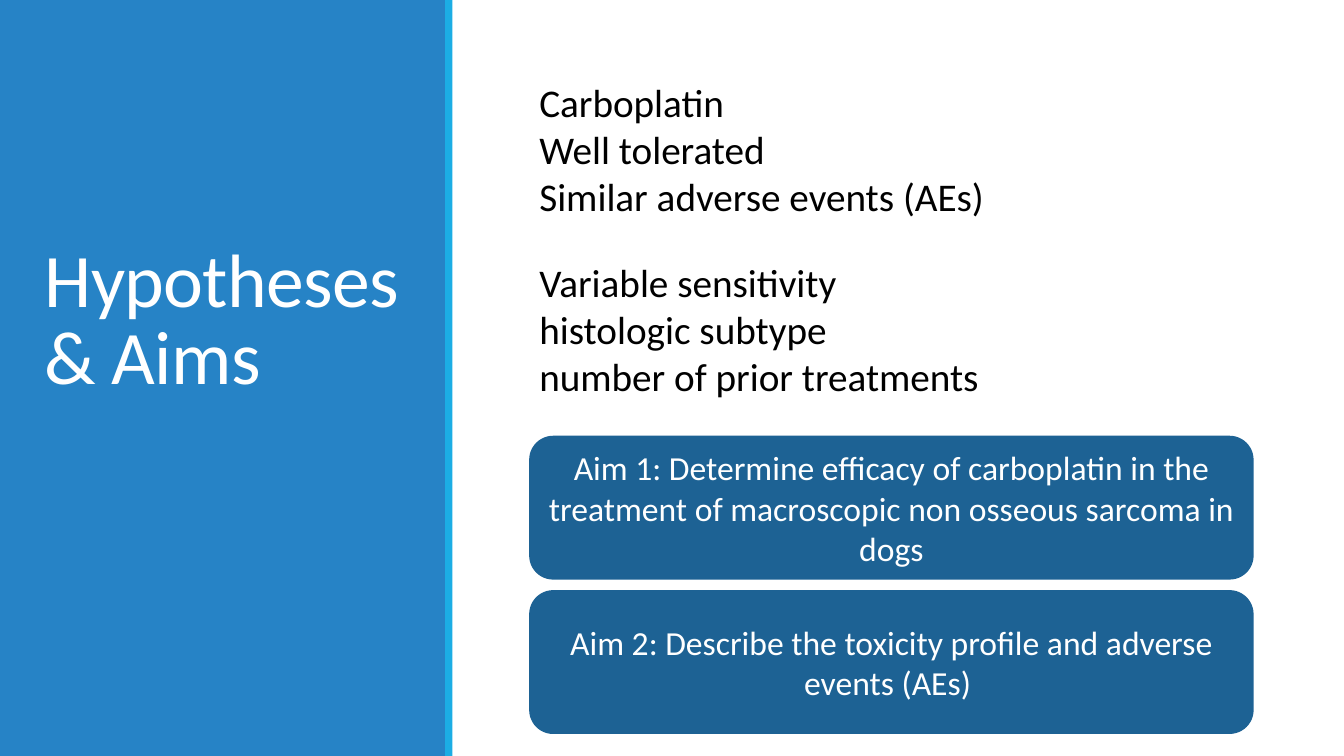
from dataclasses import dataclass

from lxml.etree import SubElement
from pptx import Presentation
from pptx.dml.color import RGBColor
from pptx.enum.shapes import MSO_SHAPE
from pptx.enum.text import MSO_ANCHOR, MSO_AUTO_SIZE, PP_ALIGN
from pptx.oxml.ns import qn
from pptx.shapes.autoshape import Shape
from pptx.slide import Slide
from pptx.text.text import _Paragraph as Paragraph
from pptx.util import Emu, Pt

EMU_PER_PX = 9525
FONT = "Calibri"
WHITE, BLACK = "FFFFFF", "000000"
BLUE, CYAN, NAVY = "2683C6", "1CADE4", "1D6294"
CONTENT_LEFT = 504
AIM_TOP, AIM_HEIGHT, AIM_GAP = 415, 137, 10


@dataclass
class Box:
    left: int
    top: int
    width: int
    height: int


@dataclass
class Panel:
    box: Box
    fill: str


@dataclass
class Hypothesis:
    placeholder: int
    top: int
    lines: list[str]


PANELS = [Panel(Box(0, 0, 425, 720), BLUE), Panel(Box(424, 0, 7, 720), CYAN)]
HYPOTHESES = [
    Hypothesis(1, 70, ["Carboplatin", "Well tolerated", "Similar adverse events (AEs)"]),
    Hypothesis(2, 241, ["Variable sensitivity", "histologic subtype", "number of prior treatments"]),
]
AIMS = [
    "Aim 1: Determine efficacy of carboplatin in the treatment of macroscopic non osseous sarcoma in dogs",
    "Aim 2: Describe the toxicity profile and adverse events (AEs) ",
]


def px(length: int) -> Emu:
    return Emu(length * EMU_PER_PX)


def color(value: str) -> RGBColor:
    return RGBColor.from_string(value)


def place(shape: Shape, box: Box) -> None:
    shape.left, shape.top = px(box.left), px(box.top)
    shape.width, shape.height = px(box.width), px(box.height)


def style(paragraph: Paragraph, size: int, text_color: str, alignment: PP_ALIGN) -> None:
    paragraph.alignment = alignment
    paragraph.font.name = FONT
    paragraph.font.size = Pt(size)
    paragraph.font.color.rgb = color(text_color)


def add_block(slide: Slide, kind: MSO_SHAPE, box: Box, fill: str) -> Shape:
    shape = slide.shapes.add_shape(
        kind, px(box.left), px(box.top), px(box.width), px(box.height)
    )
    shape.shadow.inherit = False
    shape.fill.solid()
    shape.fill.fore_color.rgb = color(fill)
    shape.line.fill.background()
    return shape


def add_panel(slide: Slide, panel: Panel) -> None:
    shape = add_block(slide, MSO_SHAPE.RECTANGLE, panel.box, panel.fill)
    slide.shapes.title.element.addprevious(shape.element)


def fill_title(slide: Slide) -> None:
    title = slide.shapes.title
    place(title, Box(33, 143, 389, 243))
    frame = title.text_frame
    frame.text = "Hypotheses \v& Aims"
    frame.auto_size = MSO_AUTO_SIZE.NONE
    frame.vertical_anchor = MSO_ANCHOR.BOTTOM
    paragraph = frame.paragraphs[0]
    paragraph.line_spacing = 0.85
    style(paragraph, 54, WHITE, PP_ALIGN.LEFT)
    for run in paragraph.runs:
        run._r.get_or_add_rPr().set("spc", "-50")


def fill_hypothesis(slide: Slide, hypothesis: Hypothesis) -> None:
    body = slide.placeholders[hypothesis.placeholder]
    place(body, Box(CONTENT_LEFT, hypothesis.top, 640, 145))
    frame = body.text_frame
    frame.text = "\n".join(hypothesis.lines)
    frame.auto_size = MSO_AUTO_SIZE.NONE
    for paragraph in frame.paragraphs:
        paragraph.space_before = Pt(0)
        properties = paragraph._p.get_or_add_pPr()
        properties.set("marL", "0")
        properties.set("indent", "0")
        SubElement(properties, qn("a:buNone"))
        style(paragraph, 28, BLACK, PP_ALIGN.LEFT)


def add_aim(slide: Slide, index: int, text: str) -> None:
    top = AIM_TOP + index * (AIM_HEIGHT + AIM_GAP)
    box = Box(CONTENT_LEFT, top, 690, AIM_HEIGHT)
    shape = add_block(slide, MSO_SHAPE.ROUNDED_RECTANGLE, box, NAVY)
    frame = shape.text_frame
    frame.text = text
    frame.word_wrap = True
    frame.vertical_anchor = MSO_ANCHOR.MIDDLE
    style(frame.paragraphs[0], 24, WHITE, PP_ALIGN.CENTER)


def main() -> None:
    presentation = Presentation()
    presentation.slide_width, presentation.slide_height = px(1280), px(720)
    slide = presentation.slides.add_slide(presentation.slide_layouts[3])
    for panel in PANELS:
        add_panel(slide, panel)
    fill_title(slide)
    for hypothesis in HYPOTHESES:
        fill_hypothesis(slide, hypothesis)
    for index, text in enumerate(AIMS):
        add_aim(slide, index, text)
    presentation.save("out.pptx")


if __name__ == "__main__":
    main()
